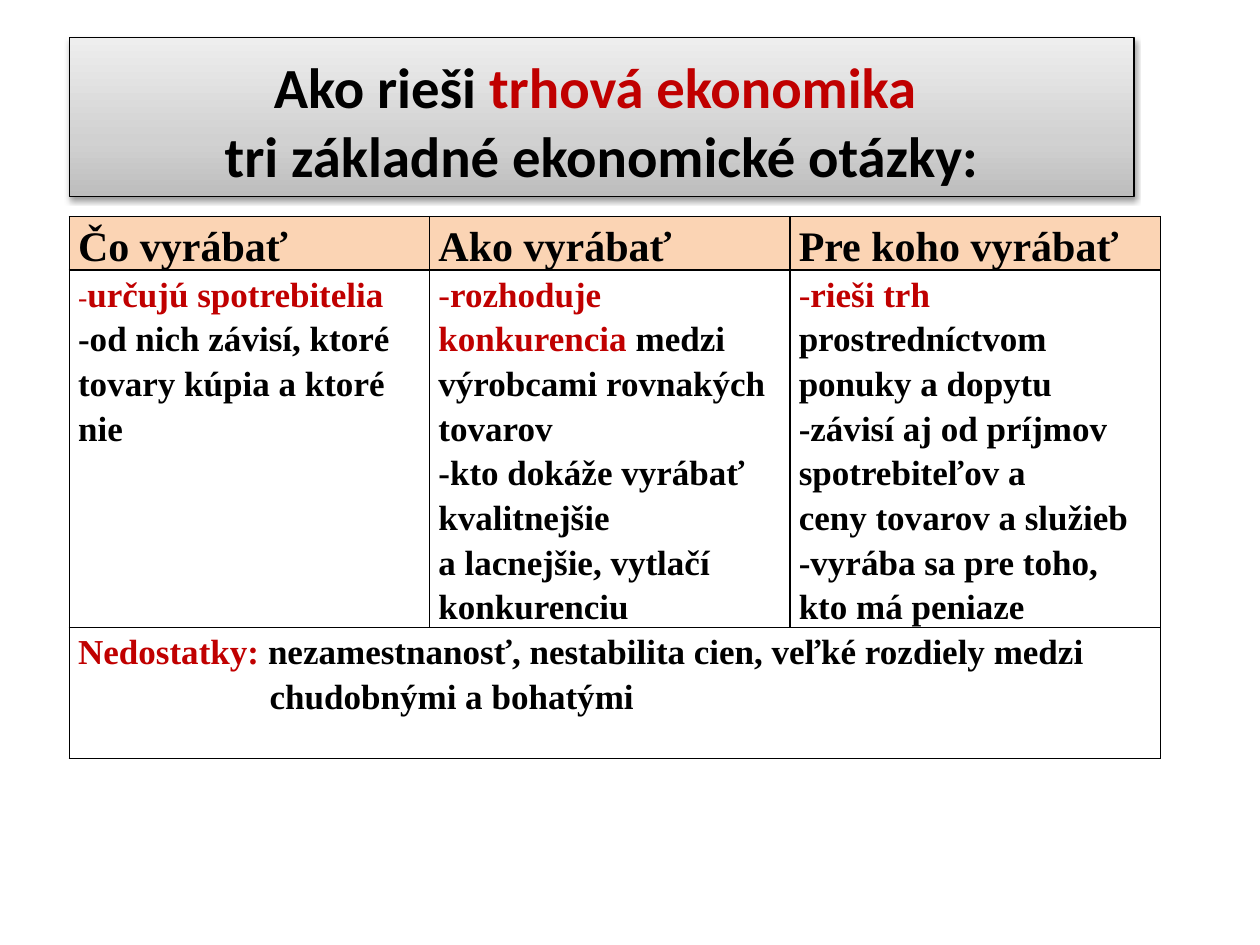
"""Build a slide on how a market economy answers the three basic economic questions."""
from dataclasses import dataclass
from typing import Optional

from lxml import etree
from pptx import Presentation
from pptx import util as u
from pptx.dml.color import RGBColor
from pptx.enum import shapes, text

NS = "http://schemas.openxmlformats.org/drawingml/2006/main"


@dataclass(frozen=True)
class Theme:
    ink: str = "000000"
    red: str = "C00000"
    peach: str = "FBD4B4"
    grays: tuple = ((0, "BDBDBD"), (35, "D1D1D1"), (100, "EEEEEE"))
    sans: str = "Calibri"
    serif: str = "Times New Roman"
    title: float = 32.4
    head: float = 24
    body: float = 20
    dash: float = 16


T = Theme()


@dataclass(frozen=True)
class Run:
    words: str
    color: str = T.ink
    bold: bool = True
    size: Optional[float] = None


@dataclass(frozen=True)
class Para:
    runs: tuple
    left: float = 0


@dataclass(frozen=True)
class Cell:
    row: int
    col: int
    paras: tuple
    size: float = T.body
    fill: Optional[str] = None


def plain(words: str, left: float = 0) -> Para:
    return Para((Run(words),), left)


def lead(key: str, rest: str = "", size: Optional[float] = None) -> Para:
    runs = (Run("-", T.red, False, size), Run(key, T.red))
    return Para(runs + ((Run(rest),) if rest else ()))


HEADS = ("Čo vyrábať", "Ako vyrábať", "Pre koho vyrábať")
BODY = (
    (lead("určujú spotrebitelia", size=T.dash),
     plain("-od nich závisí, ktoré tovary kúpia a\u00a0ktoré nie")),
    (lead("rozhoduje konkurencia ", "medzi výrobcami rovnakých tovarov"),
     plain("-kto dokáže vyrábať kvalitnejšie a\u00a0lacnejšie, vytlačí konkurenciu")),
    (lead("rieši trh ", "prostredníctvom ponuky a\u00a0dopytu"),
     plain("-závisí aj od príjmov spotrebiteľov a"),
     plain("ceny tovarov a\u00a0služieb"),
     plain("-vyrába sa pre toho, kto má peniaze")),
)
FLAWS = (
    Para((Run("Nedostatky: ", T.red),
          Run("nezamestnanosť, nestabilita cien, veľké rozdiely medzi"))),
    plain("chudobnými a bohatými", 1.52),
)
TITLE = (
    Para((Run("Ako rieši "), Run("trhová ekonomika ", T.red))),
    plain("tri základné ekonomické otázky:"),
)
CELLS = (
    *(Cell(0, i, (plain(h),), T.head, T.peach) for i, h in enumerate(HEADS)),
    *(Cell(1, i, b) for i, b in enumerate(BODY)),
    Cell(2, 0, FLAWS),
)


def write(frame, paras: tuple, face: str, size: float, space: float, align) -> None:
    for i, para in enumerate(paras):
        p = frame.paragraphs[0] if i == 0 else frame.add_paragraph()
        p.alignment, p.line_spacing = align, space
        p.font.name, p.font.size, p.font.bold = face, u.Pt(size), True
        if para.left:
            p._p.get_or_add_pPr().set("marL", str(u.Inches(para.left)))
        tones = {run.color for run in para.runs}
        if len(tones) == 1:
            p.font.color.rgb = RGBColor.from_string(para.runs[0].color)
        for part in para.runs:
            r = p.add_run()
            r.text = part.words
            if len(tones) > 1:
                r.font.color.rgb = RGBColor.from_string(part.color)
            if not part.bold:
                r.font.bold = False
            if part.size:
                r.font.size = u.Pt(part.size)


def shade(shape) -> None:
    stops = "".join(f'<a:gs pos="{pos * 1000}"><a:srgbClr val="{tone}"/></a:gs>'
                    for pos, tone in T.grays)
    grad = etree.fromstring(f'<a:gradFill xmlns:a="{NS}" rotWithShape="1"><a:gsLst>{stops}'
                            '</a:gsLst><a:lin ang="16200000" scaled="0"/></a:gradFill>')
    shape.fill.background()
    props = shape._element.spPr
    props.replace(props.find(f"{{{NS}}}noFill"), grad)
    shape.shadow.inherit = False
    glow = etree.fromstring(
        f'<a:outerShdw xmlns:a="{NS}" blurRad="{u.Pt(3.1)}" dist="{u.Pt(1.6)}" dir="5400000" '
        f'rotWithShape="0"><a:srgbClr val="{T.ink}"><a:alpha val="38000"/></a:srgbClr>'
        '</a:outerShdw>')
    props.find(f"{{{NS}}}effectLst").append(glow)


def banner(slide) -> None:
    box = slide.shapes.add_shape(shapes.MSO_SHAPE.RECTANGLE, u.Inches(0.55), u.Inches(0.3),
                                 u.Inches(8.45), u.Inches(1.26))
    shade(box)
    box.line.color.rgb = RGBColor.from_string(T.ink)
    box.line.width = u.Pt(0.75)
    frame = box.text_frame
    frame.word_wrap = True
    frame.margin_top = u.Inches(0.1)
    frame.vertical_anchor = text.MSO_ANCHOR.MIDDLE
    write(frame, TITLE, T.sans, T.title, 1.0, text.PP_ALIGN.CENTER)


def border(cell) -> None:
    props = cell._tc.get_or_add_tcPr()
    for side in "LRTB":
        props.append(etree.fromstring(
            f'<a:ln{side} xmlns:a="{NS}" w="{u.Pt(1)}"><a:solidFill>'
            f'<a:srgbClr val="{T.ink}"/></a:solidFill></a:ln{side}>'))


def grid(slide) -> None:
    wide, high = (2.86, 2.86, 2.94), (0.39, 2.72, 1.04)
    table = slide.shapes.add_table(len(high), len(wide), u.Inches(0.55), u.Inches(1.72),
                                   u.Inches(sum(wide)), u.Inches(sum(high))).table
    table.first_row = table.horz_banding = False
    for col, size in zip(table.columns, wide):
        col.width = u.Inches(size)
    for row, size in zip(table.rows, high):
        row.height = u.Inches(size)
    table.cell(2, 0).merge(table.cell(2, 2))
    for cell in table.iter_cells():
        border(cell)
        cell.fill.background()
    for item in CELLS:
        cell = table.cell(item.row, item.col)
        cell.margin_left = cell.margin_right = u.Inches(0.07)
        cell.margin_top = cell.margin_bottom = 0
        if item.fill:
            cell.fill.solid()
            cell.fill.fore_color.rgb = RGBColor.from_string(item.fill)
        write(cell.text_frame, item.paras, T.serif, item.size, 1.15, text.PP_ALIGN.LEFT)


def main() -> None:
    deck = Presentation()
    deck.slide_width, deck.slide_height = u.Inches(10), u.Inches(7.5)
    slide = deck.slides.add_slide(deck.slide_layouts[6])
    banner(slide)
    grid(slide)
    deck.save("out.pptx")


if __name__ == "__main__":
    main()
